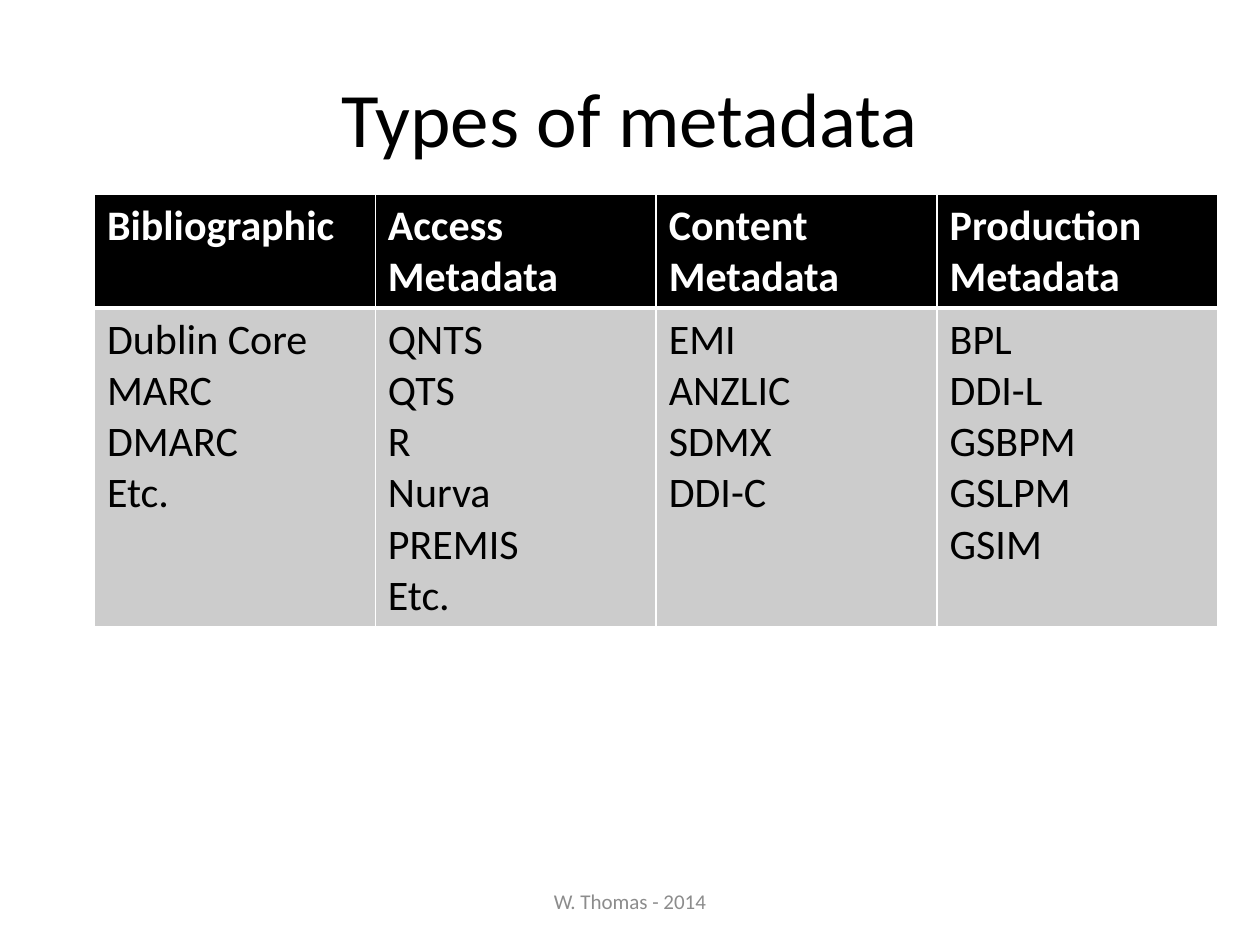
from pptx import Presentation
from pptx.dml.color import RGBColor
from pptx.enum.text import MSO_ANCHOR as Anchor, PP_ALIGN as Align
from pptx.oxml.ns import qn
from pptx.util import Pt
from lxml.etree import SubElement

COLORS = {
    "text": "000000",
    "header": "000000",
    "body": "CCCCCC",
    "light": "FFFFFF",
    "footer": "8C8C8C",
}

METADATA_TYPES = {
    "Bibliographic": ["Dublin Core", "MARC", "DMARC", "Etc."],
    "Access Metadata": ["QNTS", "QTS", "R", "Nurva", "PREMIS", "Etc."],
    "Content Metadata": ["EMI", "ANZLIC", "SDMX", "DDI-C"],
    "Production Metadata": ["BPL", "DDI-L", "GSBPM", "GSLPM", "GSIM"],
}


class SlideBuilder:
    font_name = "Calibri"

    def __init__(self, slide):
        self.slide = slide

    def set_text(self, frame, lines, size, color, bold=False, align=Align.LEFT):
        frame.text = "\n".join(lines)
        for paragraph in frame.paragraphs:
            paragraph.alignment = align
            for run in paragraph.runs:
                run.font.name = self.font_name
                run.font.size = Pt(size)
                run.font.bold = bold
                run.font.color.rgb = RGBColor.from_string(COLORS[color])

    def place_title(self, text, left, top, width, height):
        title = self.slide.shapes.title
        title.left, title.top = Pt(left), Pt(top)
        title.width, title.height = Pt(width), Pt(height)
        title.text_frame.vertical_anchor = Anchor.MIDDLE
        self.set_text(title.text_frame, [text], 44, "text", align=Align.CENTER)

    def add_footer(self, text, left, top, width, height):
        footer = self.slide.shapes.add_textbox(Pt(left), Pt(top), Pt(width), Pt(height))
        footer.text_frame.word_wrap = True
        footer.text_frame.vertical_anchor = Anchor.MIDDLE
        self.set_text(footer.text_frame, [text], 12, "footer", align=Align.CENTER)

    def add_borders(self, cell, widths):
        properties = cell._tc.get_or_add_tcPr()
        for side, width in widths.items():
            line = SubElement(properties, qn(f"a:ln{side}"), w=str(Pt(width)))
            fill = SubElement(line, qn("a:solidFill"))
            SubElement(fill, qn("a:srgbClr"), val=COLORS["light"])

    def fill_cell(self, cell, lines, fill, color, bold, borders):
        # Border elements come before the fill in the cell properties
        self.add_borders(cell, borders)
        cell.fill.solid()
        cell.fill.fore_color.rgb = RGBColor.from_string(COLORS[fill])
        self.set_text(cell.text_frame, lines, 24, color, bold)

    def add_table(self, columns, left, top, width, row_heights):
        table = self.slide.shapes.add_table(
            len(row_heights), len(columns), Pt(left), Pt(top),
            Pt(width), Pt(sum(row_heights))).table
        for row, height in zip(table.rows, row_heights):
            row.height = Pt(height)
        header_borders = {"L": 1, "R": 1, "T": 1, "B": 3}
        body_borders = {"L": 1, "R": 1, "T": 3, "B": 1}
        for index, (heading, standards) in enumerate(columns.items()):
            table.columns[index].width = Pt(width / len(columns))
            self.fill_cell(table.cell(0, index), [heading],
                           "header", "light", True, header_borders)
            self.fill_cell(table.cell(1, index), standards,
                           "body", "text", False, body_borders)


def main():
    presentation = Presentation()
    presentation.slide_width, presentation.slide_height = Pt(720), Pt(540)
    title_only = presentation.slide_layouts[5]
    builder = SlideBuilder(presentation.slides.add_slide(title_only))

    # Title
    builder.place_title("Types of metadata", 36, 21.6, 648, 90)
    # Footer
    builder.add_footer("W. Thomas - 2014", 246, 500.5, 228, 28.75)
    # Metadata standards by type
    builder.add_table(METADATA_TYPES, 54, 111, 642, [65, 182])

    presentation.save("out.pptx")


if __name__ == "__main__":
    main()
